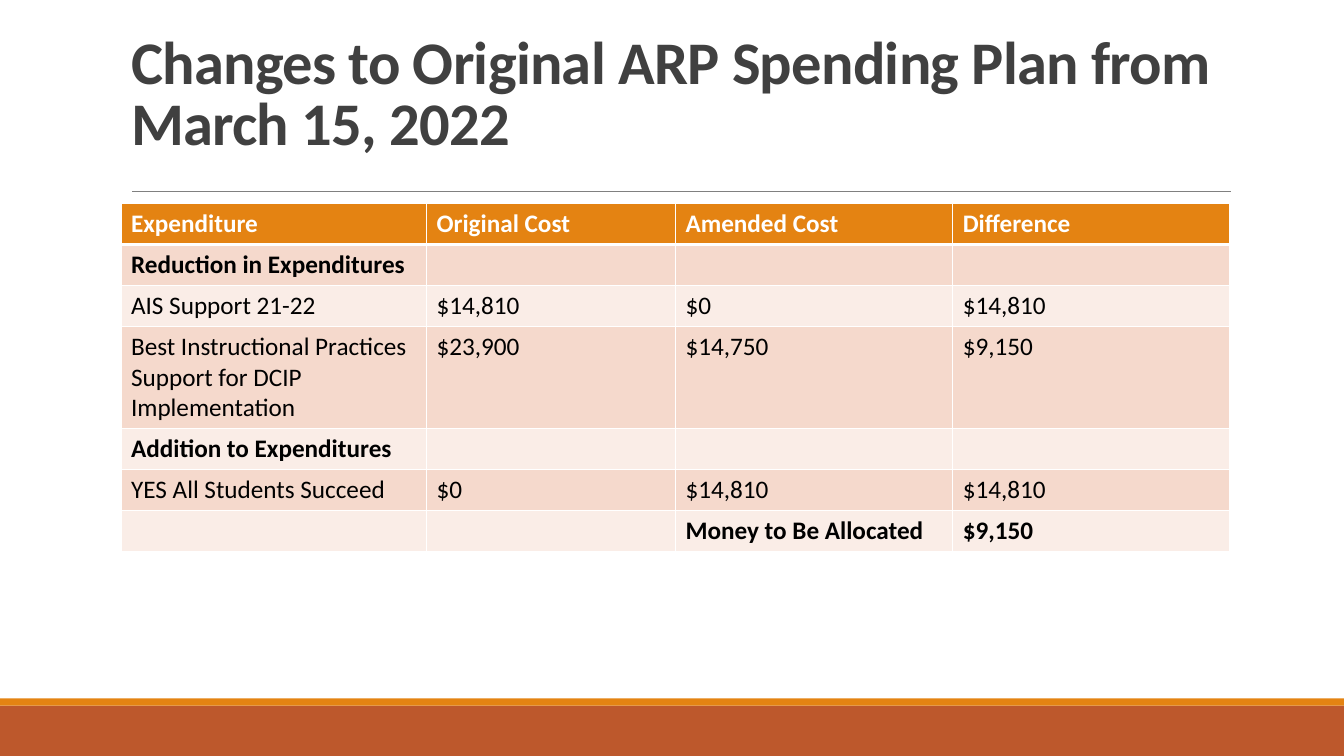
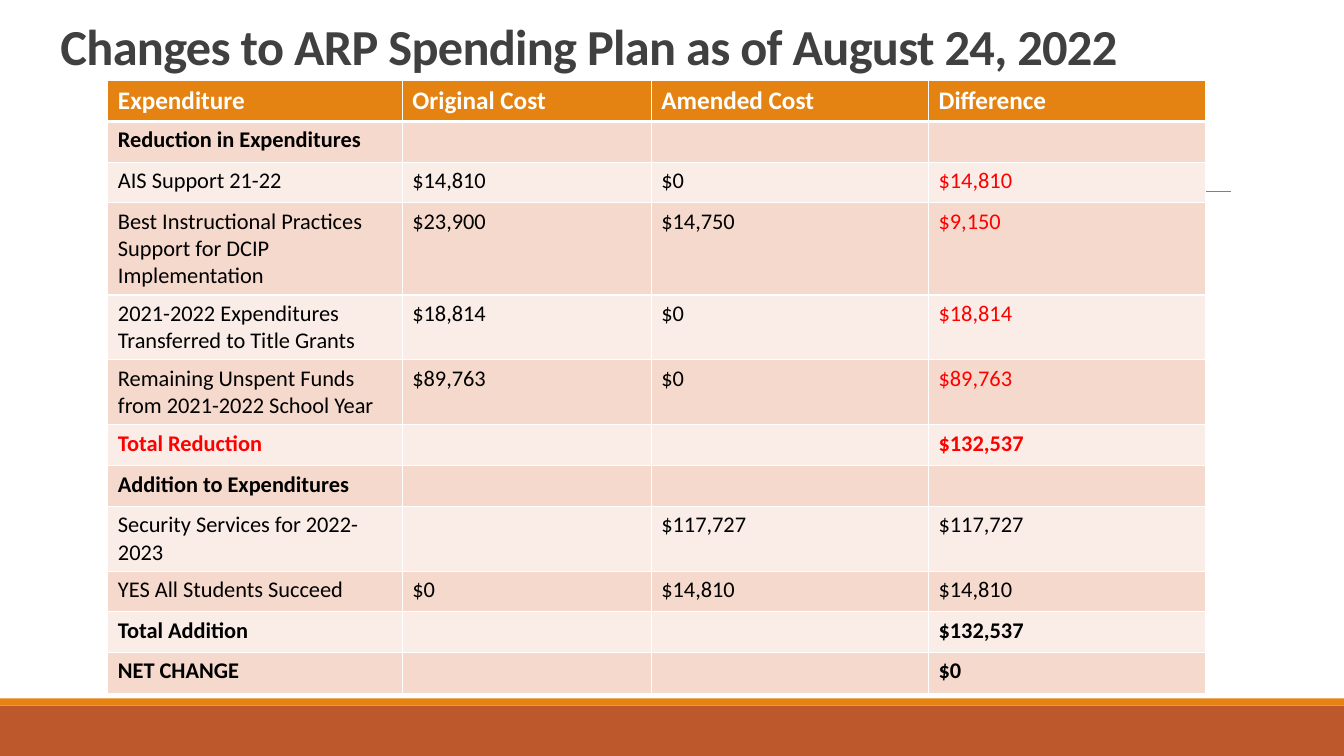
from dataclasses import dataclass

from lxml import etree
from pptx import Presentation
from pptx import util as u
from pptx.dml.color import RGBColor
from pptx.enum import shapes, text
from pptx.oxml.ns import qn

WIDTH, HEIGHT = 13.33, 7.5
FONT = "Calibri"
ORANGE, RUST, GRAY, DARK = "E48312", "BD582C", "808080", "404040"
WHITE, BLACK, RED = "FFFFFF", "000000", "FF0000"
BANDING = ("F5D9CC", "FAEDE7")
HEADINGS = ("Expenditure", "Original Cost", "Amended Cost", "Difference")
ROW_HEIGHT = 0.4  # minimum; rows grow with their text
DIFFERENCE, WHOLE_ROW = (3,), (0, 1, 2, 3)


def color(hex_code):
    return RGBColor.from_string(hex_code)


@dataclass
class Entry:
    """One table row: its cells, weight and the columns set in red."""
    cells: tuple
    bold: bool = False
    red: tuple = ()


def section(label, amount="", red=()):
    return Entry((label, "", "", amount), bold=True, red=red)


class Report:
    """Shared style and the slide being built."""

    def __init__(self):
        self.deck = Presentation()
        self.deck.slide_width = u.Inches(WIDTH)
        self.deck.slide_height = u.Inches(HEIGHT)
        self.page = None

    def new_page(self):
        self.page = self.deck.slides.add_slide(self.deck.slide_layouts[5])
        self.band(7, 0.5, RUST)
        self.band(6.93, 0.07, ORANGE)
        self.rule(1.31, 12.21, 1.9)

    def band(self, top, height, fill):
        band = self.page.shapes.add_shape(
            shapes.MSO_SHAPE.RECTANGLE,
            u.Inches(0), u.Inches(top), u.Inches(WIDTH), u.Inches(height))
        band.shadow.inherit = False
        band.fill.solid()
        band.fill.fore_color.rgb = color(fill)
        band.line.fill.background()

    def rule(self, left, right, y):
        line = self.page.shapes.add_connector(
            shapes.MSO_CONNECTOR.STRAIGHT,
            u.Inches(left), u.Inches(y), u.Inches(right), u.Inches(y))
        line.line.color.rgb = color(GRAY)
        line.line.width = u.Pt(0.5)
        etree.SubElement(line._element.spPr, qn("a:effectLst"))

    def style(self, para, size, fill, bold):
        para.font.name = FONT
        para.font.size = u.Pt(size)
        para.font.bold = bold
        para.font.color.rgb = color(fill)

    def title(self, words, left, top, width, height, size):
        box = self.page.shapes.title
        box.left, box.top = u.Inches(left), u.Inches(top)
        box.width, box.height = u.Inches(width), u.Inches(height)
        frame = box.text_frame
        frame.auto_size = text.MSO_AUTO_SIZE.NONE
        frame.vertical_anchor = text.MSO_ANCHOR.BOTTOM
        para = frame.paragraphs[0]
        para.alignment = text.PP_ALIGN.LEFT
        para.line_spacing = 0.85
        self.style(para, size, DARK, True)
        span = para.add_run()
        span.text = words
        span._r.get_or_add_rPr().set("spc", "-50")

    def borders(self, cell, top, bottom):
        props = cell._tc.get_or_add_tcPr()
        for side, points in (("L", 1), ("R", 1), ("T", top), ("B", bottom)):
            edge = etree.SubElement(props, qn(f"a:ln{side}"), w=str(u.Pt(points)))
            fill = etree.SubElement(edge, qn("a:solidFill"))
            etree.SubElement(fill, qn("a:srgbClr"), val=WHITE)

    def cell(self, cell, words, fill, size, ink, bold, top=1, bottom=1):
        self.borders(cell, top, bottom)
        cell.fill.solid()
        cell.fill.fore_color.rgb = color(fill)
        if words:
            cell.text = words
            self.style(cell.text_frame.paragraphs[0], size, ink, bold)

    def table(self, left, top, widths, entries, size):
        count = len(entries) + 1
        table = self.page.shapes.add_table(
            count, len(widths), u.Inches(left), u.Inches(top),
            u.Inches(sum(widths)), u.Inches(ROW_HEIGHT * count)).table
        table.first_row = table.horz_banding = False
        for column, width in zip(table.columns, widths):
            column.width = u.Inches(width)
        for row in table.rows:
            row.height = u.Inches(ROW_HEIGHT)
        for c, heading in enumerate(HEADINGS):
            self.cell(table.cell(0, c), heading, ORANGE, 18, WHITE, True, bottom=3)
        for r, entry in enumerate(entries):
            for c, words in enumerate(entry.cells):
                self.cell(table.cell(r + 1, c), words, BANDING[r % 2], size,
                          RED if c in entry.red else BLACK, entry.bold,
                          top=1 if r else 3)


BEST_PRACTICES = "Best Instructional Practices Support for DCIP Implementation"
STUDENTS = Entry(("YES All Students Succeed", "$0", "$14,810", "$14,810"))

MARCH = [
    section("Reduction in Expenditures"),
    Entry(("AIS Support 21-22", "$14,810", "$0", "$14,810")),
    Entry((BEST_PRACTICES, "$23,900", "$14,750", "$9,150")),
    section("Addition to Expenditures"),
    STUDENTS,
    Entry(("", "", "Money to Be Allocated", "$9,150"), bold=True),
]

AUGUST = [
    section("Reduction in Expenditures"),
    Entry(("AIS Support 21-22", "$14,810", "$0", "$14,810"), red=DIFFERENCE),
    Entry((BEST_PRACTICES, "$23,900", "$14,750", "$9,150"), red=DIFFERENCE),
    Entry(("2021-2022 Expenditures Transferred to Title Grants",
           "$18,814", "$0", "$18,814"), red=DIFFERENCE),
    Entry(("Remaining Unspent Funds from 2021-2022 School Year",
           "$89,763", "$0", "$89,763"), red=DIFFERENCE),
    section("Total Reduction", "$132,537", red=WHOLE_ROW),
    section("Addition to Expenditures"),
    Entry(("Security Services for 2022-2023", "", "$117,727", "$117,727")),
    STUDENTS,
    section("Total Addition", "$132,537"),
    section("NET CHANGE", "$0"),
]


def main():
    report = Report()

    # March changes
    report.new_page()
    report.title("Changes to Original ARP Spending Plan from March 15, 2022",
                 1.2, 0.55, 11, 1.07, 43.2)
    report.table(1.2, 2.02, (3.03, 2.47, 2.75, 2.75), MARCH, 18)

    # August changes
    report.new_page()
    report.title("Changes to ARP Spending Plan as of August 24, 2022",
                 0.5, 0.22, 12.17, 0.58, 36)
    report.table(1.07, 0.8, (2.92, 2.47, 2.75, 2.75), AUGUST, 16)

    report.deck.save("out.pptx")


if __name__ == "__main__":
    main()
